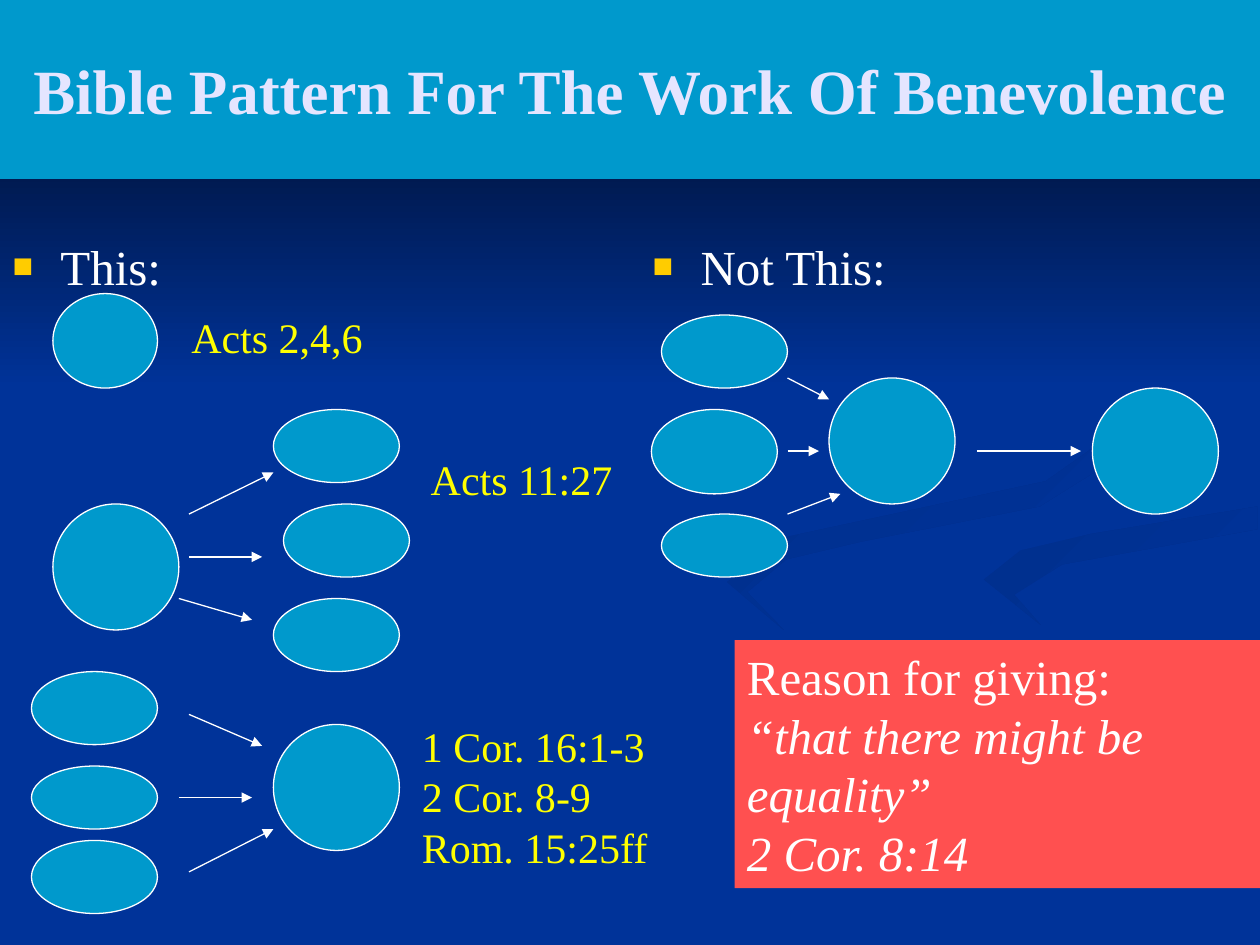
from lxml import etree
from pptx import Presentation
from pptx import util as u
from pptx.dml.color import RGBColor
from pptx.enum import shapes, text
from pptx.oxml.ns import qn

NAVY = RGBColor(0x00, 0x33, 0x99)
DEEP_NAVY = RGBColor(0x00, 0x2F, 0x8D)
MIDNIGHT = RGBColor(0x00, 0x05, 0x14)
TEAL = RGBColor(0x00, 0x99, 0xCC)
LAVENDER = RGBColor(0xE5, 0xE5, 0xFF)
WHITE = RGBColor(0xFF, 0xFF, 0xFF)
YELLOW = RGBColor(0xFF, 0xFF, 0x00)
CORAL = RGBColor(0xFF, 0x50, 0x50)
FONT = "Times New Roman"

prs = Presentation()
prs.slide_width, prs.slide_height = u.Inches(10), u.Inches(7.5)
slide = prs.slides.add_slide(prs.slide_layouts[3])
slide.background.fill.solid()
slide.background.fill.fore_color.rgb = NAVY


def shade(backdrop, start, end, angle):
    backdrop.shadow.inherit = False
    backdrop.line.fill.background()
    backdrop.fill.gradient()
    backdrop.fill.gradient_angle = angle
    for stop, color in zip(backdrop.fill.gradient_stops, (start, end)):
        stop.color.rgb = color


def write(frame, lines, size, color, bold=None, italic_from=9):
    for index, line in enumerate(lines):
        paragraph = frame.paragraphs[0] if index == 0 else frame.add_paragraph()
        run = paragraph.add_run()
        run.text = line
        run.font.color.rgb = color
        look = {"name": FONT, "size": u.Pt(size), "bold": bold,
                "italic": True if index >= italic_from else None}
        for key, value in look.items():
            setattr(run.font, key, value)


ribbons = [
    [(6.83, 4.3), (8.25, 4.02), (8.89, 3.62), (8.86, 3.16), (8.88, 3.41), (8.3, 3.82),
     (6.25, 4.26), (5.77, 4.62), (6.22, 5), (5.93, 4.7), (6.24, 4.44)],
    [(7.81, 4.6), (8.26, 4.96), (8.05, 4.72), (8.43, 4.48), (9.98, 4.2), (9.98, 4.02),
     (8.65, 4.24), (8.1, 4.37)],
]
for outline in ribbons:
    points = [(u.Inches(x), u.Inches(y)) for x, y in outline]
    builder = slide.shapes.build_freeform(*points[0])
    builder.add_line_segments(points[1:], close=True)
    shade(builder.convert_to_shape(), DEEP_NAVY, NAVY, 315)

sky = slide.shapes.add_shape(shapes.MSO_SHAPE.RECTANGLE, 0, 0, u.Inches(10), u.Inches(3.08))
shade(sky, MIDNIGHT, NAVY, 270)

heading, this_side, other_side = slide.placeholders
body_top, body_height = 1.83, 5.67
frames = [(heading, 0, 0, 10, 1.42),
          (this_side, 0, body_top, 5.17, body_height),
          (other_side, 5.08, body_top, 4.92, body_height)]
for part, *box in frames:
    slide.shapes.element.append(part.element)
    for key, value in zip(("left", "top", "width", "height"), box):
        setattr(part, key, u.Inches(value))
    part.text_frame.auto_size = text.MSO_AUTO_SIZE.NONE

heading.fill.solid()
heading.fill.fore_color.rgb = TEAL
heading.text_frame.vertical_anchor = text.MSO_ANCHOR.MIDDLE
write(heading.text_frame, ["Bible Pattern For The Work Of Benevolence"], 36, LAVENDER, bold=True)

for side, label in ((this_side, "This:"), (other_side, "Not This:")):
    write(side.text_frame, [label], 28, WHITE)
    bullet = side.text_frame.paragraphs[0]._p.get_or_add_pPr()
    bullet.set("marL", str(u.Inches(0.38)))
    bullet.set("indent", str(u.Inches(-0.38)))
    tint = etree.SubElement(bullet, qn("a:buClr"))
    etree.SubElement(tint, qn("a:srgbClr"), val="FFCC00")
    etree.SubElement(bullet, qn("a:buSzPct"), val="70000")
    etree.SubElement(bullet, qn("a:buFont"), typeface=FONT)
    etree.SubElement(bullet, qn("a:buChar"), char="■")

churches_by_size = {
    (0.83, 0.75): [(0.42, 2.33)],
    (1, 1): [(0.42, 4), (2.17, 5.75), (6.58, 3), (8.67, 3.08)],
    (1, 0.67): [(5.17, 3.25)],
    (1, 0.58): [(2.17, 3.25), (2.25, 4), (2.17, 4.75), (0.25, 5.33), (0.25, 6.67), (5.25, 2.5)],
    (1, 0.5): [(0.25, 6.08), (5.25, 4.08)],
}
for size, corners in churches_by_size.items():
    for corner in corners:
        church = slide.shapes.add_shape(shapes.MSO_SHAPE.OVAL, *map(u.Inches, corner + size))
        church.shadow.inherit = False
        church.fill.solid()
        church.fill.fore_color.rgb = TEAL
        church.line.color.rgb = WHITE
        church.line.width = u.Pt(0.75)

gifts = [
    (1.5, 4.08, 2.17, 3.75), (1.5, 4.42, 2.08, 4.42), (1.42, 4.75, 2, 4.92),
    (1.5, 5.67, 2.08, 5.92), (1.42, 6.33, 2, 6.33), (1.5, 6.92, 2.17, 6.58),
    (6.25, 3, 6.58, 3.17), (6.25, 3.58, 6.5, 3.58), (6.25, 4.08, 6.67, 3.92),
    (7.75, 3.58, 8.58, 3.58),
]
for ends in gifts:
    gift = slide.shapes.add_connector(shapes.MSO_CONNECTOR.STRAIGHT, *map(u.Inches, ends))
    gift.line.color.rgb = WHITE
    gift.line.width = u.Pt(0.75)
    etree.SubElement(gift.line._get_or_add_ln(), qn("a:tailEnd"), type="triangle")
    etree.SubElement(gift.element.spPr, qn("a:effectLst"))

verses = [
    (1.42, 2.42, 1.56, 0.5, False, ["Acts 2,4,6"]),
    (3.32, 3.55, 1.65, 0.5, False, ["Acts 11:27"]),
    (3.25, 5.67, 2.4, 1.3, True, ["1 Cor. 16:1-3", "2 Cor. 8-9", "Rom. 15:25ff"]),
]
for *box, wrap, lines in verses:
    verse = slide.shapes.add_textbox(*map(u.Inches, box))
    verse.text_frame.word_wrap = wrap
    write(verse.text_frame, lines, 24, YELLOW)

reason = slide.shapes.add_textbox(*map(u.Inches, (5.83, 5.08, 4.17, 1.97)))
reason.fill.solid()
reason.fill.fore_color.rgb = CORAL
reason.text_frame.word_wrap = True
write(reason.text_frame,
      ["Reason for giving:", "“that there might be equality”", "2 Cor. 8:14"],
      28, WHITE, italic_from=1)

prs.save("out.pptx")
